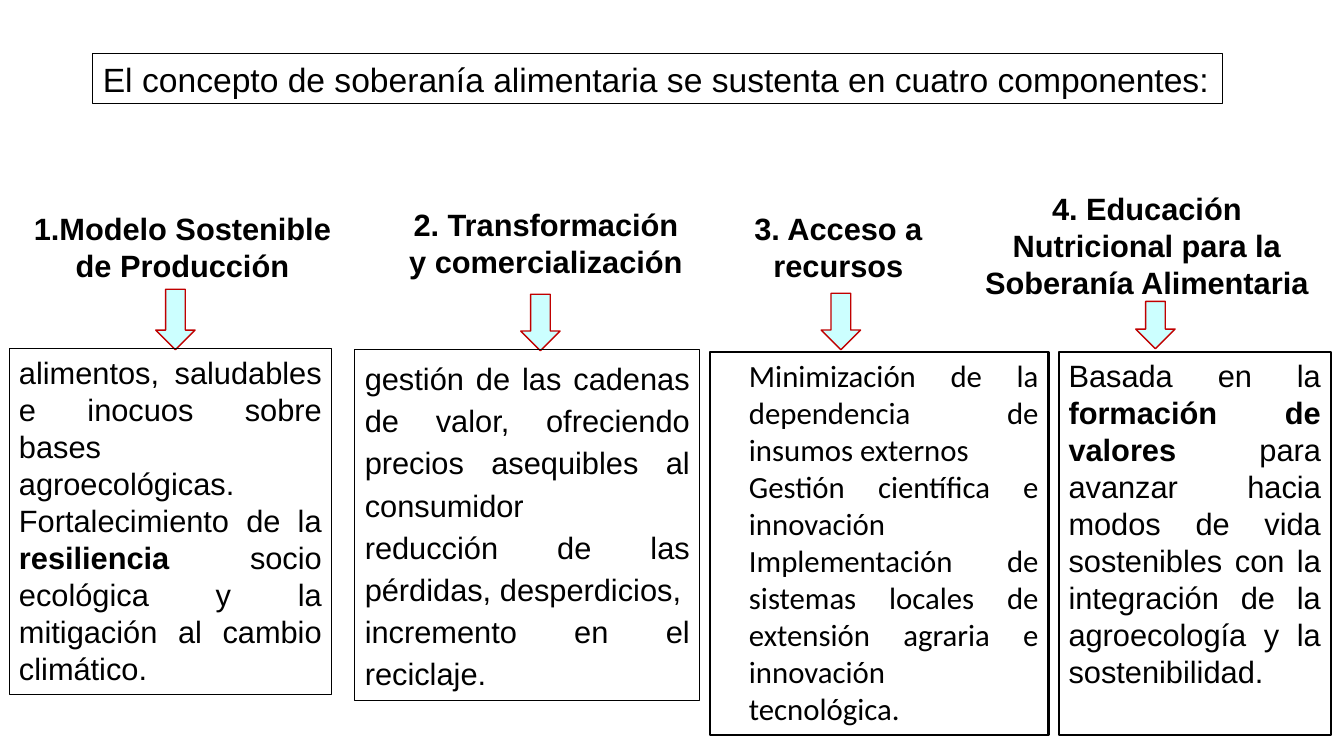
from pptx import Presentation
from pptx.dml.color import RGBColor
from pptx.enum.shapes import MSO_SHAPE as Shape
from pptx.enum.text import MSO_ANCHOR as Anchor, MSO_AUTO_SIZE as AutoSize, PP_ALIGN as Align
from pptx.util import Inches, Pt

BLACK = RGBColor(0x00, 0x00, 0x00)
AQUA = RGBColor(0xCC, 0xFF, 0xFF)
RED = RGBColor(0xC0, 0x00, 0x00)

# Content: each paragraph is a list of (text, bold) runs
TITLE = "El concepto de soberanía alimentaria se sustenta en cuatro componentes:"
TITLE_BOX = (0.92, 0.53, 11.21, 0.5)
ARROW_WIDTH = 0.39

COMPONENTS = [
    {
        "heading": "1.Modelo Sostenible de Producción",
        "heading_box": (0.21, 2.03, 3.2, 0.84),
        "arrow": (1.74, 2.87, 0.6),  # centre, top, height
        "box": (0.09, 3.46, 3.2, 3.43),
        "format": {"border": 0.75},
        "paragraphs": [
            [("alimentos, saludables e inocuos sobre bases agroecológicas.", False)],
            [("Fortalecimiento de la ", False), ("resiliencia", True),
             (" socio ecológica y la mitigación al cambio climático.", False)],
        ],
    },
    {
        "heading": "2. Transformación y comercialización",
        "heading_box": (3.91, 1.99, 3.01, 0.84),
        "arrow": (5.36, 2.92, 0.56),
        "box": (3.52, 3.47, 3.42, 3.48),
        "format": {"border": 0.75, "spacing": 1.14},
        "paragraphs": [
            [("gestión de las cadenas de valor, ofreciendo precios asequibles al consumidor", False)],
            [("reducción de las pérdidas, desperdicios,  incremento en el reciclaje.", False)],
        ],
    },
    {
        "heading": "3. Acceso a recursos",
        "heading_box": (7.22, 2.03, 2.19, 0.84),
        "arrow": (8.34, 2.91, 0.56),
        "box": (7.04, 3.49, 3.36, 3.8),
        "format": {"border": 1.5, "font": "Calibri", "indent": 0.29},
        "paragraphs": [
            [("Minimización de la dependencia de insumos externos", False)],
            [("Gestión científica e innovación", False)],
            [("Implementación de sistemas locales de extensión agraria e innovación tecnológica.", False)],
        ],
    },
    {
        "heading": "4. Educación Nutricional para la Soberanía Alimentaria",
        "heading_box": (9.54, 1.83, 3.67, 1.21),
        "arrow": (11.46, 2.99, 0.47),
        "box": (10.5, 3.49, 2.7, 3.8),
        "format": {"border": 1.5},
        "paragraphs": [
            [("Basada en la ", False), ("formación de valores ", True),
             ("para avanzar hacia modos de vida sostenibles con la integración "
              "de la agroecología y la sostenibilidad.", False)],
        ],
    },
]


def write(shape, paragraphs, align, size=22, font="Arial", spacing=None, indent=0):
    frame = shape.text_frame
    frame.word_wrap = True
    frame.auto_size = AutoSize.NONE
    frame.vertical_anchor = Anchor.TOP
    for index, runs in enumerate(paragraphs):
        paragraph = frame.add_paragraph() if index else frame.paragraphs[0]
        paragraph.alignment = align
        if spacing:
            paragraph.line_spacing = spacing
        if indent:
            properties = paragraph._p.get_or_add_pPr()
            properties.set("marL", str(Inches(indent)))
            properties.set("indent", "0")
        for text, bold in runs:
            run = paragraph.add_run()
            run.text = text
            for name, value in {"name": font, "size": Pt(size), "bold": bold}.items():
                setattr(run.font, name, value)
            run.font.color.rgb = BLACK


def outline(shape, color, width):
    shape.line.color.rgb = color
    shape.line.width = Pt(width)


def add_box(slide, box, paragraphs, border, **text_format):
    shape = slide.shapes.add_shape(Shape.RECTANGLE, *map(Inches, box))
    shape.shadow.inherit = False
    shape.fill.background()
    outline(shape, BLACK, border)
    write(shape, paragraphs, Align.JUSTIFY, **text_format)


def add_arrow(slide, center, top, height):
    box = (center - ARROW_WIDTH / 2, top, ARROW_WIDTH, height)
    shape = slide.shapes.add_shape(Shape.DOWN_ARROW, *map(Inches, box))
    shape.shadow.inherit = False
    shape.fill.solid()
    shape.fill.fore_color.rgb = AQUA
    outline(shape, RED, 1)


def main():
    presentation = Presentation()
    presentation.slide_width = Inches(13.33)
    presentation.slide_height = Inches(7.5)
    slide = presentation.slides.add_slide(presentation.slide_layouts[5])

    # Framed title
    title = slide.shapes.title
    title.left, title.top, title.width, title.height = map(Inches, TITLE_BOX)
    outline(title, BLACK, 0.75)
    write(title, [[(TITLE, False)]], Align.JUSTIFY, size=24)

    # Four components: heading, arrow, description
    for component in COMPONENTS:
        heading = slide.shapes.add_textbox(*map(Inches, component["heading_box"]))
        write(heading, [[(component["heading"], True)]], Align.CENTER)
        add_arrow(slide, *component["arrow"])
        add_box(slide, component["box"], component["paragraphs"], **component["format"])

    presentation.save("out.pptx")


if __name__ == "__main__":
    main()
